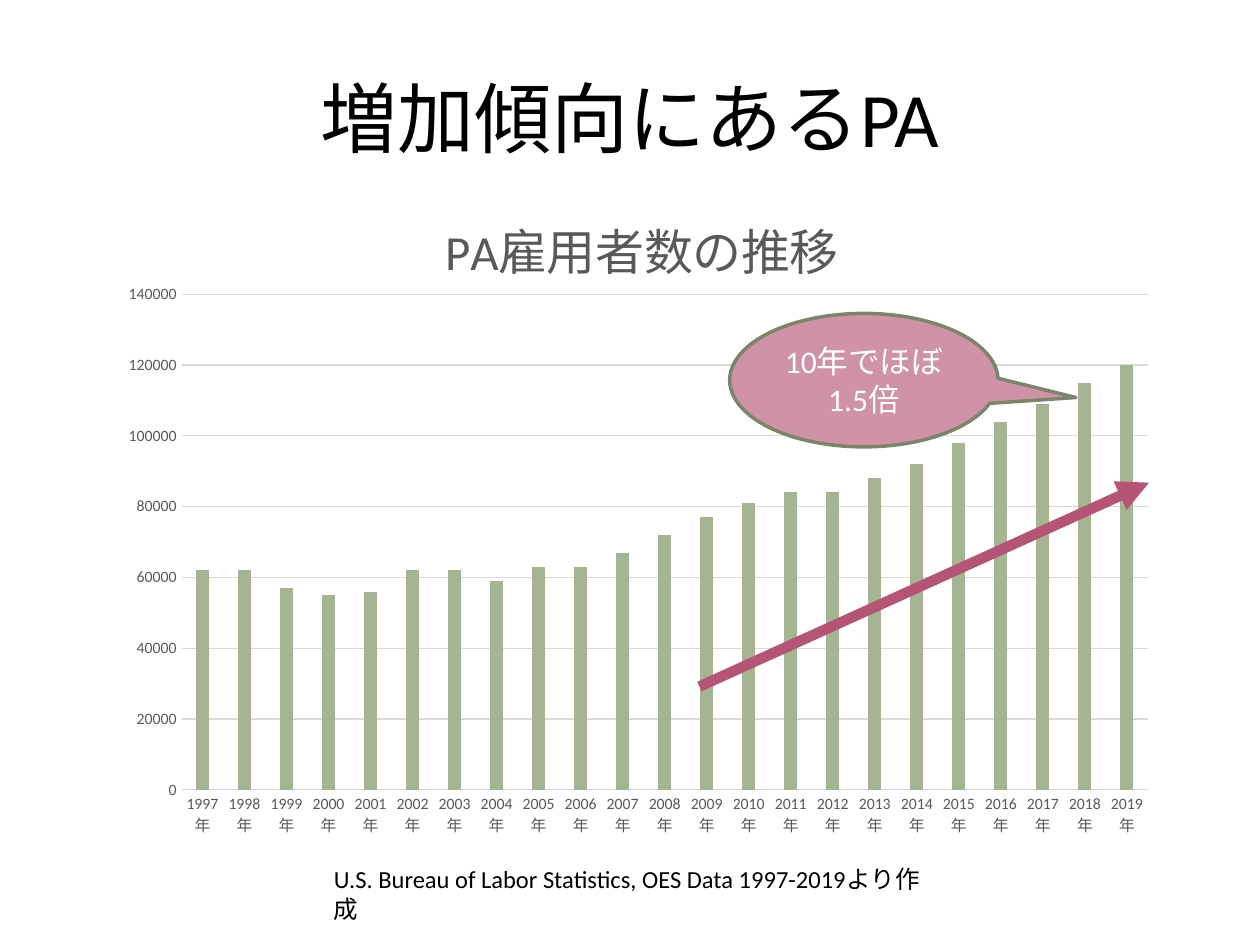
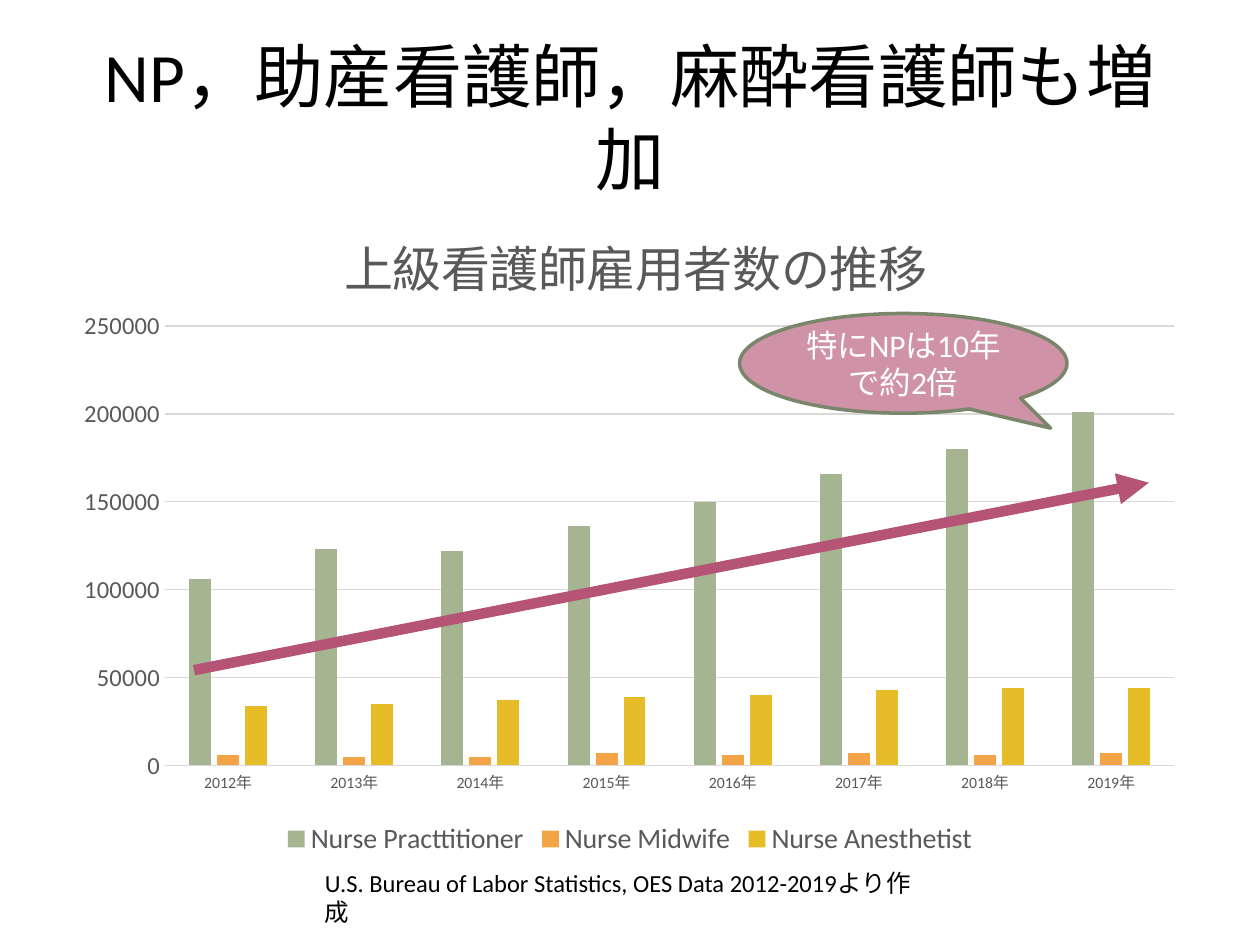
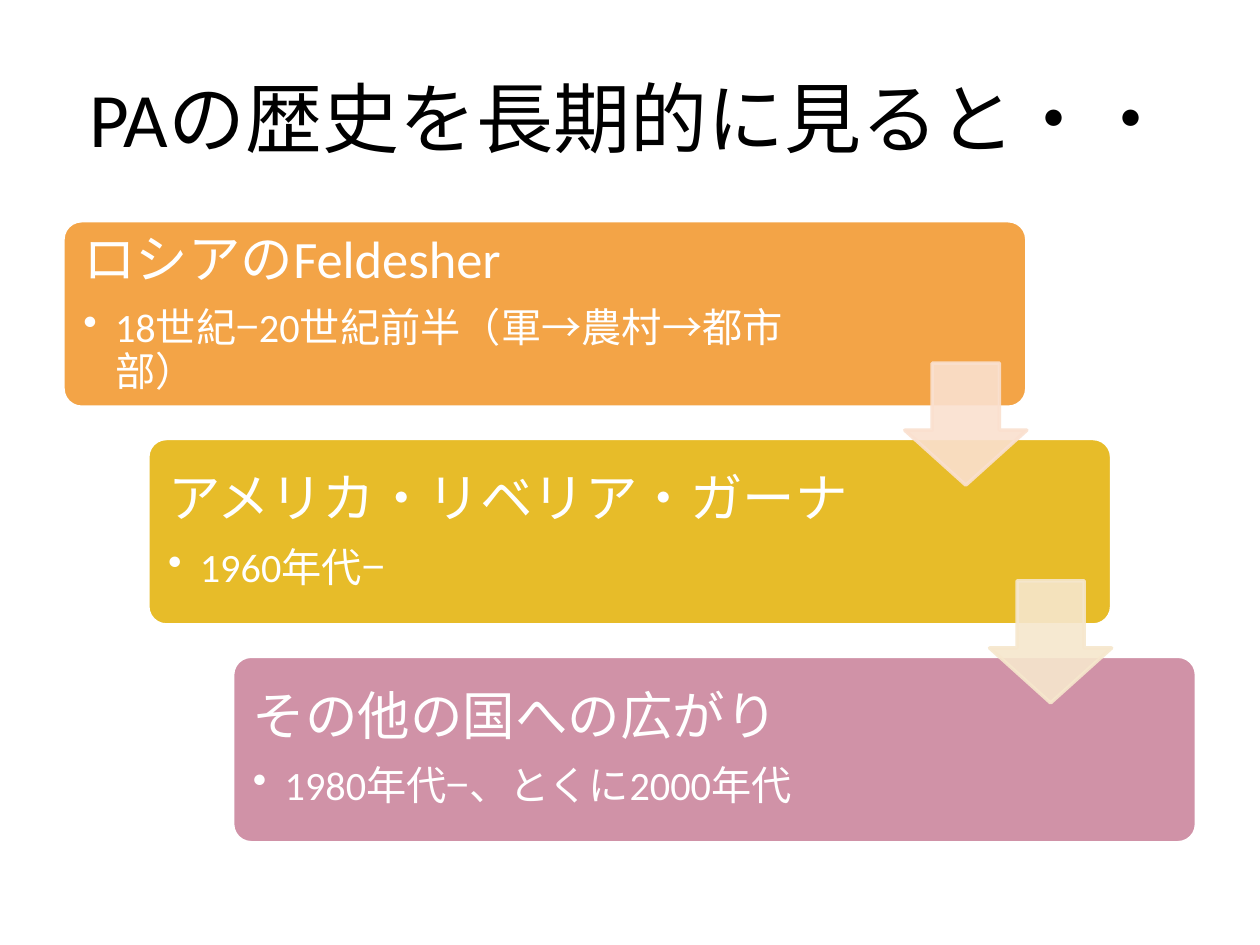
"""Build three slides on the growth and history of physician assistants and nurses."""
import lxml.etree
import pptx
import pptx.chart.data
import pptx.dml.color
import pptx.enum.chart
import pptx.enum.shapes
import pptx.enum.text
import pptx.oxml
import pptx.oxml.ns
import pptx.util

Cm, Pt, qn = pptx.util.Cm, pptx.util.Pt, pptx.oxml.ns.qn
SHAPE = pptx.enum.shapes.MSO_SHAPE
ALIGN = pptx.enum.text.PP_ALIGN
ANCHOR = pptx.enum.text.MSO_ANCHOR
FONT = "Calibri"
BLACK, WHITE, GREY, GRID = "000000", "FFFFFF", "595959", "D9D9D9"
GREEN, ORANGE, YELLOW, PINK = "A5B592", "F3A447", "E7BC29", "D092A7"
OLIVE, ROSE = "7A866C", "B55475"
TITLE_BOX = (1.27, 0.76, 22.86, 3.18)

CHART_SLIDES = [
    {
        "title": ("増加傾向にあるPA", 44),
        "chart": (2.16, 3.33, 21.41, 13.69),
        "chart_title": "PA雇用者数の推移",
        "title_at": {"x": 0.31, "y": 0.05},
        "plot_at": {"x": 0.07, "y": 0.19, "w": 0.91, "h": 0.73},
        "years": range(1997, 2020),
        "value_size": 9,
        "series": [
            ("Series 1", GREEN, [62, 62, 57, 55, 56, 62, 62, 59, 63, 63, 67, 72,
                                 77, 81, 84, 84, 88, 92, 98, 104, 109, 115, 120]),
        ],
        "callout": ("10年でほぼ1.5倍", (14.71, 6.32, 5.41, 2.69), (0.79, 0.13)),
        "trend": (14.1, 13.84, 23.16, 9.73),
        "source": ("U.S. Bureau of Labor Statistics, OES Data 1997-2019より作成",
                   (6.48, 17.3, 12.8, 0.86)),
    },
    {
        "title": ("NP，助産看護師，麻酔看護師も増加", 39.6),
        "chart": (1.27, 3.53, 22.86, 13.84),
        "chart_title": "上級看護師雇用者数の推移",
        "title_at": {"x": 0.24, "y": 0.06},
        "plot_at": {"x": 0.09, "y": 0.22, "w": 0.89, "h": 0.64},
        "years": range(2012, 2020),
        "value_size": 14,
        "series": [
            ("Nurse Practtitioner", GREEN, [106, 123, 122, 136, 150, 166, 180, 201]),
            ("Nurse Midwife", ORANGE, [6, 5, 5, 7, 6, 7, 6, 7]),
            ("Nurse Anesthetist", YELLOW, [34, 35, 37, 39, 40, 43, 44, 44]),
        ],
        "callout": ("特にNPは10年で約2倍", (14.91, 6.32, 6.6, 2.01), (0.45, 0.65)),
        "trend": (3.91, 13.51, 23.16, 9.73),
        "source": ("U.S. Bureau of Labor Statistics, OES Data 2012-2019より作成",
                   (6.3, 17.37, 12.8, 0.86)),
    },
]

HISTORY_TITLE = ("PAの歴史を長期的に見ると・・", 44)
STAGES = [
    ("ロシアのFeldesher", "18世紀−20世紀前半（軍→農村→都市部）", ORANGE, 15.37),
    ("アメリカ・リベリア・ガーナ", "1960年代−", YELLOW, 15.04),
    ("その他の国への広がり", "1980年代−、とくに2000年代", PINK, 15.04),
]
STAGE_ARROWS = ["FAE0CF", "F6E7CD"]
STAGE_X, STAGE_Y, STAGE_W, STAGE_H = 1.27, 4.45, 19.43, 3.76
STEP_X, STEP_Y = 1.71, 4.39
ARROW_X, ARROW_Y, ARROW_SIZE = 18.24, 7.32, 2.46


def rgb(code):
    return pptx.dml.color.RGBColor.from_string(code)


def cm(values):
    return [Cm(v) for v in values]


def apply(obj, values):
    for name, value in values.items():
        setattr(obj, name, value)


def set_font(font, size, color):
    apply(font, {"name": FONT, "size": Pt(size), "bold": False})
    font.color.rgb = rgb(color)


def set_line(line, color, width):
    line.color.rgb = rgb(color)
    line.width = Pt(width)


def add_run(p, text, size, color):
    r = p.add_run()
    r.text = text
    set_font(r.font, size, color)


def add_text(s, box, text, size, **paragraph):
    tf = s.shapes.add_textbox(*cm(box)).text_frame
    tf.word_wrap = True
    apply(tf.paragraphs[0], paragraph)
    add_run(tf.paragraphs[0], text, size, BLACK)
    return tf


def add_title(s, title):
    tf = add_text(s, TITLE_BOX, *title, alignment=ALIGN.CENTER)
    tf.vertical_anchor = ANCHOR.MIDDLE


def add_preset(s, kind, box, adjustments, fill, line):
    sp = s.shapes.add_shape(kind, *cm(box))
    sp.shadow.inherit = False
    for i, value in enumerate(adjustments):
        sp.adjustments[i] = value
    sp.fill.solid()
    sp.fill.fore_color.rgb = rgb(fill)
    set_line(sp.line, line, 2)
    return sp


def set_layout(parent, index, fractions):
    """Give a chart part a fixed place as fractions of the chart."""
    for old in parent.findall(qn("c:layout")):
        parent.remove(old)
    layout = pptx.oxml.parse_xml(f'<c:layout {pptx.oxml.ns.nsdecls("c")}/>')
    manual = lxml.etree.SubElement(layout, qn("c:manualLayout"))
    entries = [("layoutTarget", "inner")] if "w" in fractions else []
    entries += [(f"{k}Mode", "edge") for k in "xy"] + list(fractions.items())
    for name, value in entries:
        lxml.etree.SubElement(manual, qn(f"c:{name}")).set("val", str(value))
    parent.insert(index, layout)


def add_column_chart(s, d):
    data = pptx.chart.data.CategoryChartData()
    data.categories = [f"{year}年" for year in d["years"]]
    for name, _, thousands in d["series"]:
        data.add_series(name, [v * 1000 for v in thousands])
    kind = pptx.enum.chart.XL_CHART_TYPE.COLUMN_CLUSTERED
    chart = s.shapes.add_chart(kind, *cm(d["chart"]), data).chart
    set_font(chart.font, 10, BLACK)

    add_run(chart.chart_title.text_frame.paragraphs[0], d["chart_title"], 28, GREY)
    title = chart.chart_title._element
    set_layout(title, 1, d["title_at"])
    set_layout(title.getparent().find(qn("c:plotArea")), 0, d["plot_at"])

    plot = chart.plots[0]
    apply(plot, {"gap_width": 219, "overlap": -27, "vary_by_categories": False})
    for series, (_, color, _) in zip(plot.series, d["series"]):
        series.format.fill.solid()
        series.format.fill.fore_color.rgb = rgb(color)

    no_tick = pptx.enum.chart.XL_TICK_MARK.NONE
    for axis, size in ((chart.category_axis, 9), (chart.value_axis, d["value_size"])):
        apply(axis, {"major_tick_mark": no_tick, "minor_tick_mark": no_tick})
        set_font(axis.tick_labels.font, size, GREY)
    set_line(chart.category_axis.format.line, GRID, 0.75)
    chart.value_axis.format.line.fill.background()
    set_line(chart.value_axis.major_gridlines.format.line, GRID, 0.75)

    chart.has_legend = len(d["series"]) > 1
    if chart.has_legend:
        bottom = pptx.enum.chart.XL_LEGEND_POSITION.BOTTOM
        apply(chart.legend, {"position": bottom, "include_in_layout": False})
        set_font(chart.legend.font, 16, GREY)


def add_trend(s, ends):
    straight = pptx.enum.shapes.MSO_CONNECTOR.STRAIGHT
    sp = s.shapes.add_connector(straight, *cm(ends))
    set_line(sp.line, ROSE, 6)
    ln = sp.line._get_or_add_ln()
    lxml.etree.SubElement(ln, qn("a:tailEnd")).set("type", "triangle")
    lxml.etree.SubElement(sp._element.spPr, qn("a:effectLst"))


def add_chart_slide(s, d):
    add_title(s, d["title"])
    add_column_chart(s, d)
    text, box, tip = d["callout"]
    sp = add_preset(s, SHAPE.OVAL_CALLOUT, box, tip, PINK, OLIVE)
    p = sp.text_frame.paragraphs[0]
    p.alignment = ALIGN.CENTER
    add_run(p, text, 18, WHITE)
    add_trend(s, d["trend"])
    text, box = d["source"]
    add_text(s, box, text, 14)


def add_stage(s, i, heading, detail, color, text_width):
    x, y = STAGE_X + i * STEP_X, STAGE_Y + i * STEP_Y
    add_preset(s, SHAPE.ROUNDED_RECTANGLE, (x, y, STAGE_W, STAGE_H), [0.1], color, WHITE)
    box = (x + 0.11, y + 0.11, text_width, STAGE_H - 0.22)
    tf = s.shapes.add_textbox(*cm(box)).text_frame
    apply(tf, {"word_wrap": True, "vertical_anchor": ANCHOR.MIDDLE})
    apply(tf, {f"margin_{side}": Cm(0.3) for side in ("left", "top", "right", "bottom")})
    lines = ((tf.paragraphs[0], heading, 30, 10.5), (tf.add_paragraph(), detail, 23, 3.5))
    for p, text, size, after in lines:
        apply(p, {"line_spacing": 0.9, "space_after": Pt(after)})
        add_run(p, text, size, WHITE)
    p.level = 1
    pPr = p._p.get_or_add_pPr()
    pPr.set("marL", str(Cm(0.64)))
    pPr.set("indent", str(-Cm(0.64)))
    lxml.etree.SubElement(pPr, qn("a:buChar")).set("char", "•")


def add_stage_arrow(s, i, color):
    box = (ARROW_X + i * STEP_X, ARROW_Y + i * STEP_Y, ARROW_SIZE, ARROW_SIZE)
    sp = add_preset(s, SHAPE.DOWN_ARROW, box, (0.55, 0.45), color, color)
    for clr in sp._element.spPr.iter(qn("a:srgbClr")):
        lxml.etree.SubElement(clr, qn("a:alpha")).set("val", "90000")


def main():
    prs = pptx.Presentation()
    apply(prs, {"slide_width": Cm(25.4), "slide_height": Cm(19.05)})
    blank = prs.slide_layouts[6]
    for d in CHART_SLIDES:
        add_chart_slide(prs.slides.add_slide(blank), d)
    s = prs.slides.add_slide(blank)
    add_title(s, HISTORY_TITLE)
    for i, stage in enumerate(STAGES):
        add_stage(s, i, *stage)
    for i, color in enumerate(STAGE_ARROWS):
        add_stage_arrow(s, i, color)
    prs.save("out.pptx")


if __name__ == "__main__":
    main()
